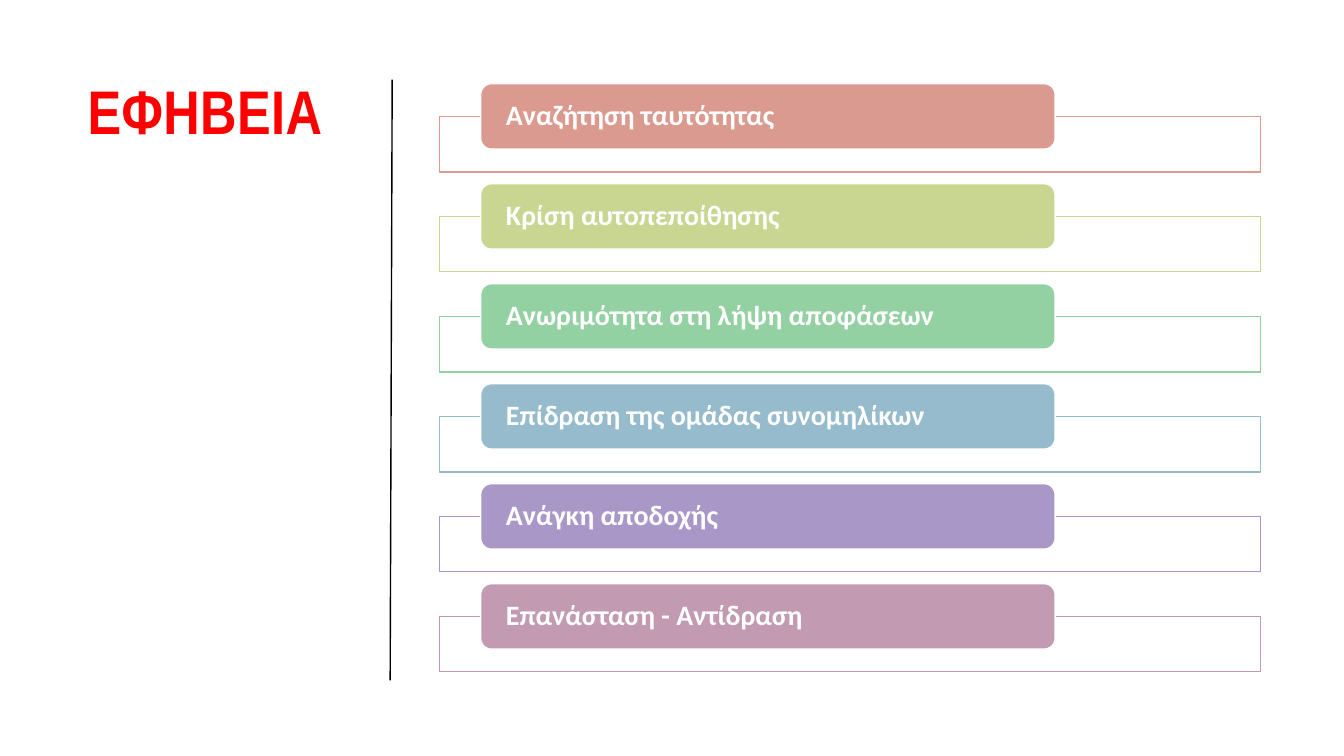
from pptx import Presentation
from pptx.dml.color import RGBColor
from pptx.enum.shapes import MSO_CONNECTOR, MSO_SHAPE
from pptx.enum.text import MSO_ANCHOR, PP_ALIGN
from pptx.oxml.ns import qn
from pptx.util import Inches, Pt
from lxml import etree

RECT, PILL = MSO_SHAPE.RECTANGLE, MSO_SHAPE.ROUNDED_RECTANGLE
STRAIGHT = MSO_CONNECTOR.STRAIGHT
LEFT, TOP, MIDDLE = PP_ALIGN.LEFT, MSO_ANCHOR.TOP, MSO_ANCHOR.MIDDLE

TITLE = "ΕΦΗΒΕΙΑ"
TRAITS = [
    ("Αναζήτηση ταυτότητας", "DB9A8F"),
    ("Κρίση αυτοπεποίθησης", "C8D691"),
    ("Ανωριμότητα στη λήψη αποφάσεων", "93D1A3"),
    ("Επίδραση της ομάδας συνομηλίκων", "95BBCC"),
    ("Ανάγκη αποδοχής", "A997C7"),
    ("Επανάσταση - Αντίδραση", "C29AB1"),
]
WHITE, BLACK, RED = "FFFFFF", "000000", "FF0000"

LIST_LEFT, LIST_WIDTH = 4.36, 8.14
FIRST_TOP, LAST_TOP = 0.83, 5.79
PITCH = (LAST_TOP - FIRST_TOP) / (len(TRAITS) - 1)
PILL_INDENT, PILL_WIDTH, PILL_HEIGHT = 0.05 * LIST_WIDTH, 0.7 * LIST_WIDTH, 0.65
FRAME_HEIGHT, FRAME_DROP = 0.55, PILL_HEIGHT / 2


def rgb(value):
    """Turn a hex string into a colour."""
    return RGBColor.from_string(value)


def add_box(slide, kind, box, fill, line):
    """Add a filled, outlined shape without a shadow."""
    sp = slide.shapes.add_shape(kind, *map(Inches, box))
    sp.shadow.inherit = False
    sp.fill.solid()
    sp.fill.fore_color.rgb = rgb(fill)
    sp.line.color.rgb = rgb(line)
    sp.line.width = Pt(1)
    return sp


def write(sp, text, font, size, color, anchor, insets):
    """Write one bold left-aligned paragraph and return it."""
    tf = sp.text_frame
    tf.word_wrap = True
    tf.vertical_anchor = anchor
    tf.margin_left = tf.margin_right = Inches(insets[0])
    tf.margin_top = tf.margin_bottom = Inches(insets[1])
    p = tf.paragraphs[0]
    p.text = text
    p.alignment = LEFT
    f = p.runs[0].font
    f.name, f.size, f.bold = font, Pt(size), True
    f.color.rgb = rgb(color)
    return p


def add_title(slide):
    """Add the heading and the rule beside it."""
    sp = slide.shapes.add_textbox(*map(Inches, (0.77, 0.67, 2.76, 4.91)))
    p = write(sp, TITLE, "Arial Narrow", 44, RED, TOP, (0.1, 0.05))
    p.runs[0].font._element.set("spc", "30")
    rule = slide.shapes.add_connector(STRAIGHT, *map(Inches, (3.87, 6.75, 3.89, 0.79)))
    rule.line.color.rgb = rgb(BLACK)
    rule.line.width = Pt(1)
    etree.SubElement(rule._element.spPr, qn("a:effectLst"))


def add_trait(slide, row, text, color):
    """Add one frame with its label overlapping the top edge."""
    top = FIRST_TOP + row * PITCH
    frame = add_box(slide, RECT, (LIST_LEFT, top + FRAME_DROP, LIST_WIDTH, FRAME_HEIGHT),
                    WHITE, color)
    fill = frame._element.spPr.find(qn("a:solidFill"))
    etree.SubElement(fill[0], qn("a:alpha"), val="90000")
    pill = add_box(slide, PILL, (LIST_LEFT + PILL_INDENT, top, PILL_WIDTH, PILL_HEIGHT),
                   color, WHITE)
    p = write(pill, text, "Calibri", 20, WHITE, MIDDLE, (0.22, 0))
    p.line_spacing = 0.9


def main():
    """Build the slide."""
    prs = Presentation()
    prs.slide_width, prs.slide_height = Inches(13.33), Inches(7.5)
    slide = prs.slides.add_slide(prs.slide_layouts[6])
    add_title(slide)
    for row, (text, color) in enumerate(TRAITS):
        add_trait(slide, row, text, color)
    prs.save("out.pptx")


if __name__ == "__main__":
    main()
